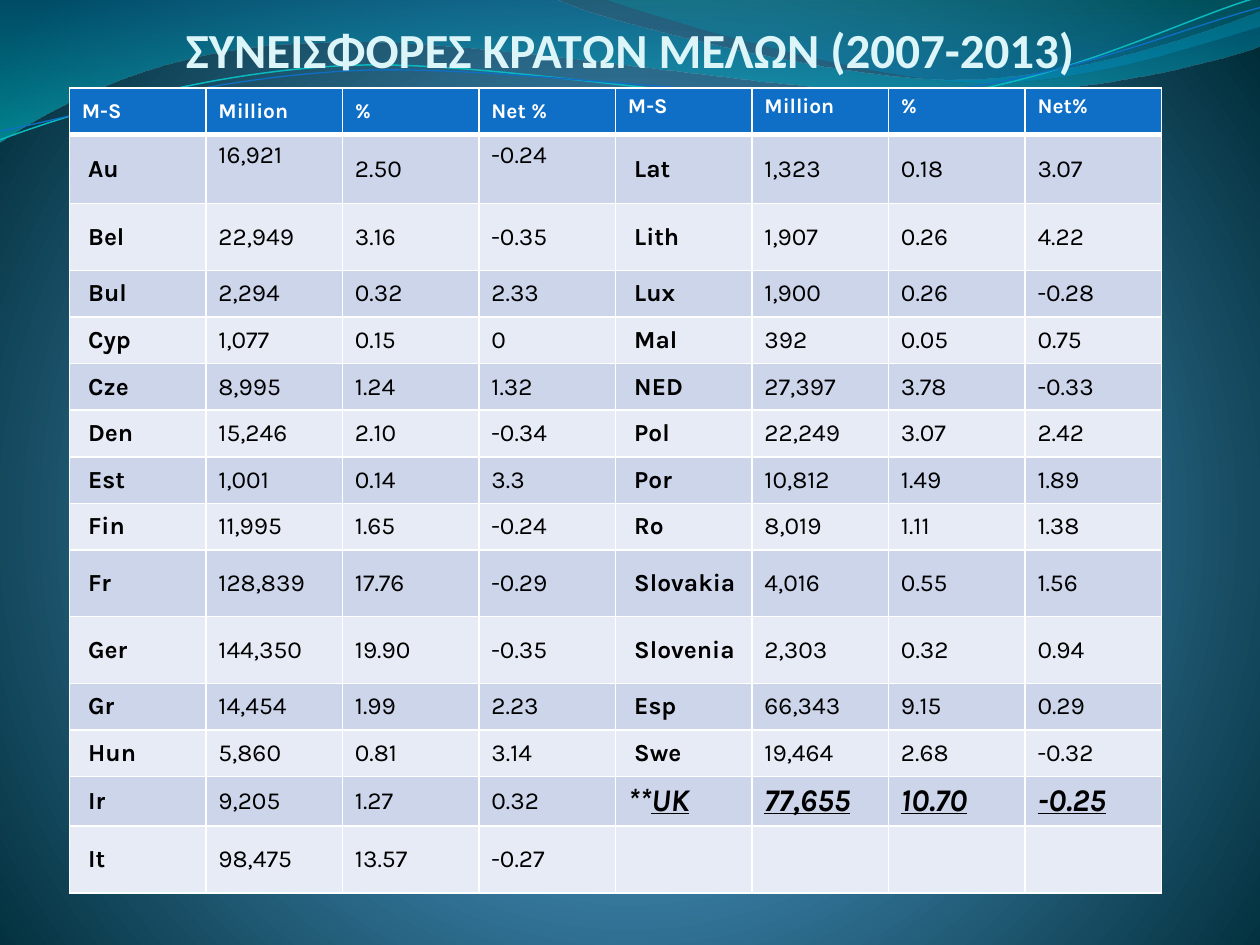
from math import cos, radians, sin

from pptx import Presentation
from pptx.dml.color import RGBColor
from pptx.enum.text import MSO_ANCHOR, MSO_AUTO_SIZE, PP_ALIGN
from pptx.oxml import parse_xml
from pptx.util import Inches, Pt

TOP, MIDDLE, BOTTOM = MSO_ANCHOR.TOP, MSO_ANCHOR.MIDDLE, MSO_ANCHOR.BOTTOM
CENTER = PP_ALIGN.CENTER
NO_FIT = MSO_AUTO_SIZE.NONE
NS = ('xmlns:a="http://schemas.openxmlformats.org/drawingml/2006/main" '
      'xmlns:p="http://schemas.openxmlformats.org/presentationml/2006/main"')
NBSP = chr(160)
TILT = 357.3

HEADS = ["M-S", "Million", "%", "Net %", "M-S", "Million", "%", "Net%"]
LEFT = """Au 16,921 2.50 -0.24
Bel 22,949 3.16 -0.35
Bul 2,294 0.32 2.33
Cyp 1,077 0.15 0
Cze 8,995 1.24 1.32
Den 15,246 2.10 -0.34
Est 1,001 0.14 3.3
Fin 11,995 1.65 -0.24
Fr 128,839 17.76 -0.29
Ger 144,350 19.90 -0.35
Gr 14,454 1.99 2.23
Hun 5,860 0.81 3.14
Ir 9,205 1.27 0.32
It 98,475 13.57 -0.27"""
RIGHT = """Lat 1,323 0.18 3.07
Lith 1,907 0.26 4.22
Lux 1,900 0.26 -0.28
Mal 392 0.05 0.75
NED 27,397 3.78 -0.33
Pol 22,249 3.07 2.42
Por 10,812 1.49 1.89
Ro 8,019 1.11 1.38
Slovakia 4,016 0.55 1.56
Slovenia 2,303 0.32 0.94
Esp 66,343 9.15 0.29
Swe 19,464 2.68 -0.32
UK 77,655 10.70 -0.25"""
TALL = {1, 2, 9, 10, 14}

BAND = [(0, -0.01), (4.4, -0.01),
        (4.76, 0.17, 6.64, 0.63, 7.58, 0.63), (8.53, 0.63, 9.58, 0.26, 10, 0.09),
        (10.01, 0.36),
        (9.83, 0.44, 8.7, 0.76, 7.46, 0.75), (6.22, 0.75, 3.82, 0.28, 2.57, 0.34),
        (1.29, 0.35, 0.46, 0.83, -0.01, 1.13)]
CREST = [(4.79, -0.01), (5.09, 0.11, 6.82, 0.62, 7.69, 0.65),
         (8.56, 0.69, 9.61, 0.32, 10, 0.21), (10, 0)]
TEAL = [(0, 1.11), (0.48, 0.93, 1.58, 0.57, 2.77, 0.52),
        (3.95, 0.47, 5.93, 0.89, 7.13, 0.8), (8.33, 0.71, 9.38, 0.15, 9.98, -0.02)]
BLUE = [(0, 1.04), (0.47, 0.96, 1.64, 0.61, 2.83, 0.56),
        (4.03, 0.51, 5.97, 0.83, 7.17, 0.75), (8.36, 0.67, 9.41, 0.21, 10, 0.06)]


def rgb(code):
    return RGBColor.from_string(code)


def grad(stops, shade):
    marks = "".join(
        f'<a:gs pos="{at * 1000}"><a:srgbClr val="{code}">'
        f'<a:alpha val="{alpha * 1000}"/></a:srgbClr></a:gs>'
        for at, code, alpha in stops)
    return f'<a:gradFill {NS} rotWithShape="1"><a:gsLst>{marks}</a:gsLst>{shade}</a:gradFill>'


def local(x, y, box, turn):
    left, top, width, height = box
    dx, dy = x - left - width / 2, y - top - height / 2
    c, s = cos(radians(-turn)), sin(radians(-turn))
    x, y = dx * c - dy * s + width / 2, dx * s + dy * c + height / 2
    return f'<a:pt x="{Inches(x)}" y="{Inches(y)}"/>'


def curve(slide, parts, box, close, turn=0):
    left, top, width, height = (Inches(size) for size in box)
    pen = slide.shapes.build_freeform(left, top)
    pen.add_line_segments([(left + width, top + height)], close=close)
    shape = pen.convert_to_shape()
    shape.shadow.inherit = False
    shape.rotation = turn
    steps = []
    for spot, part in enumerate(parts):
        tag = "moveTo" if spot == 0 else "lnTo" if len(part) == 2 else "cubicBezTo"
        points = "".join(local(x, y, box, turn) for x, y in zip(part[::2], part[1::2]))
        steps.append(f"<a:{tag}>{points}</a:{tag}>")
    end = "<a:close/>" if close else ""
    paths = shape.element.spPr.find("{*}custGeom").find("{*}pathLst")
    paths.replace(paths[0], parse_xml(
        f'<a:path {NS} w="{width}" h="{height}">{"".join(steps)}{end}</a:path>'))
    return shape


def area(slide, parts, box, stops):
    shape = curve(slide, parts, box, True)
    shape.line.fill.background()
    fill = parse_xml(grad(stops, '<a:lin ang="5400000" scaled="0"/>'))
    shape.element.spPr.find("{*}custGeom").addnext(fill)


def stroke(slide, parts, box, code, width):
    shape = curve(slide, parts, box, False, TILT)
    shape.fill.background()
    shape.line.color.rgb = rgb(code)
    shape.line.width = Pt(width)


def backdrop(slide):
    stops = [(0, "4AA0D6", 100), (25, "4C98C7", 100), (100, "002C38", 100)]
    shade = ('<a:path path="circle"><a:fillToRect l="10000" t="110000" '
             'r="10000" b="100000"/></a:path>')
    slide.element.cSld.insert(0, parse_xml(
        f'<p:bg {NS}><p:bgPr>{grad(stops, shade)}<a:effectLst/></p:bgPr></p:bg>'))
    area(slide, BAND, (-0.01, -0.01, 10.02, 1.14), [(0, "0074A1", 45), (100, "00C6CF", 55)])
    area(slide, CREST, (4.79, -0.01, 5.21, 0.7), [(0, "00A1A9", 30), (80, "008BBF", 45)])
    stroke(slide, TEAL, (-0.02, 0.22, 10.02, 0.71), "0AB8BF", 0.85)
    stroke(slide, BLUE, (-0.02, 0.3, 10.03, 0.58), "0F6FC6", 0.75)


def heading(slide, left, top, width, height):
    title = slide.shapes.title
    title.element.getparent().append(title.element)
    title.left, title.top, title.width, title.height = left, top, width, height
    frame = title.text_frame
    frame.text = "ΣΥΝΕΙΣΦΟΡΕΣ ΚΡΑΤΩΝ ΜΕΛΩΝ (2007-2013)"
    frame.auto_size = NO_FIT
    frame.vertical_anchor = BOTTOM
    frame.margin_left = frame.margin_right = frame.margin_bottom = 0
    frame.margin_top = Inches(0.05)
    line = frame.paragraphs[0]
    line.alignment = CENTER
    style(line.font, 28, "DBF5F9", True, "Calibri")


def style(font, size, code, bold, name="Karla"):
    font.name, font.size, font.bold = name, Pt(size), bold
    font.color.rgb = rgb(code)


def edge(cell, low):
    props = cell._tc.get_or_add_tcPr()
    for spot, side in enumerate("LRTB"):
        width = Pt(low if side == "B" else 1)
        props.insert(spot, parse_xml(
            f'<a:ln{side} {NS} w="{width}"><a:solidFill><a:srgbClr val="FFFFFF"/>'
            f'</a:solidFill></a:ln{side}>'))


def paint(cell, row, col, text):
    head = row == 0
    cell.fill.solid()
    cell.fill.fore_color.rgb = rgb("0F6FC6" if head else ("E7EBF5", "CCD5EA")[row % 2])
    edge(cell, 3 if head else 1)
    if not text:
        return
    cell.vertical_anchor = TOP if head and col > 3 else MIDDLE
    line = cell.text_frame.paragraphs[0]
    last = row == 13 and col > 3
    if last and col == 4:
        line.add_run().text = "**"
        name = line.add_run()
        name.text = text
        name.font.underline = True
    else:
        line.add_run().text = text if head or col % 4 else NBSP + text
    size = 12 if head else 18 if last else 14
    style(line.font, size, "FFFFFF" if head else "000000", head or last or col % 4 == 0)
    if last:
        line.font.italic = True
        line.font.underline = col > 4
    if row == 1 and col in (1, 3):
        cell.margin_bottom = Inches(0.27)


def grid(slide, left, top, width, height):
    pairs = zip(LEFT.split("\n"), RIGHT.split("\n") + [""])
    rows = [HEADS] + [(a.split() + b.split() + [""] * 4)[:8] for a, b in pairs]
    table = slide.shapes.add_table(len(rows), 8, left, top, width, height).table
    for row, texts in enumerate(rows):
        table.rows[row].height = Inches(0.53 if row in TALL else 0.37)
        for col, text in enumerate(texts):
            paint(table.cell(row, col), row, col, text)


def main():
    deck = Presentation()
    deck.slide_width, deck.slide_height = Inches(10), Inches(7.5)
    slide = deck.slides.add_slide(deck.slide_layouts[5])
    backdrop(slide)
    heading(slide, Inches(0.5), 0, Inches(9), Inches(0.62))
    grid(slide, Inches(0.55), Inches(0.7), Inches(8.67), Inches(6.4))
    deck.save("out.pptx")


if __name__ == "__main__":
    main()
